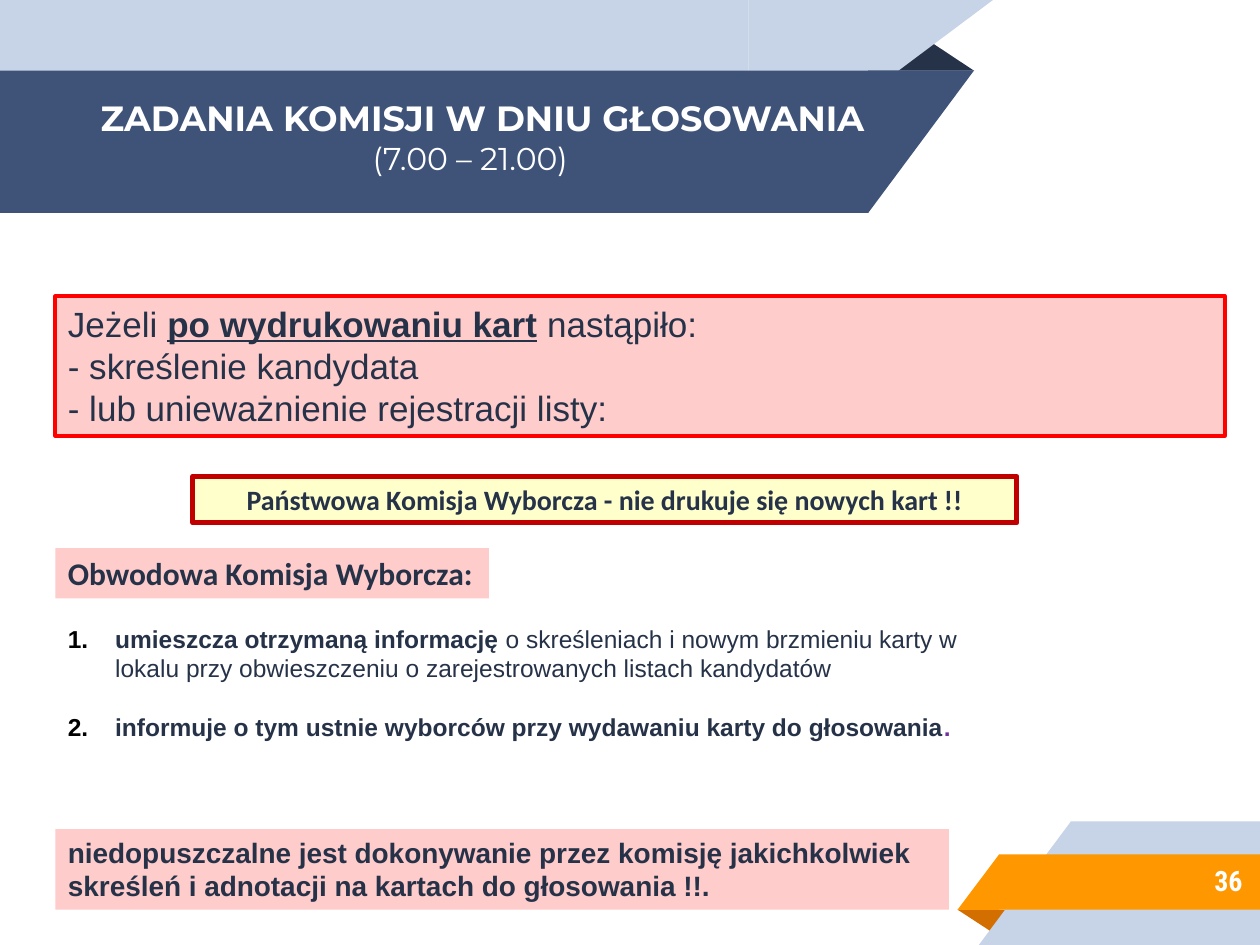
from pptx import Presentation
from pptx import util as u
from pptx.dml.color import RGBColor
from pptx.enum import shapes, text
from pptx.oxml.ns import qn
from lxml import etree

Pt = u.Pt
Kind = shapes.MSO_SHAPE
Side = text.PP_ALIGN


class Theme:
    navy, dark, pale = "3F5378", "263248", "C7D3E6"
    orange, rust, white = "FF9800", "D26F00", "FFFFFF"
    pink, cream, red, wine = "FFCCCC", "FFFFCC", "FF0000", "C00000"
    black, plum = "000000", "7030A0"
    big, mid, base, small = 20, 18, 16, 14
    head, body, label, digit = "Montserrat", "Arial", "Calibri", "Roboto Condensed"


T = Theme

FOLDS = [
    (Kind.ISOSCELES_TRIANGLE, (495.4, 13, 61.2, 27.4), T.dark, 0, False),
    (Kind.ISOSCELES_TRIANGLE, (547.2, 519.8, 31, 13.7), T.rust, 180, False),
]
TOP = [
    (0, 0, 427.7, 104.4, 139.7, T.pale),
    (0, 40.3, 496.1, 81.4, 60.5, T.navy),
]
FOOT = [
    (612, 469.4, 108, 70.6, 52.6, T.pale),
    (571, 488.2, 149, 31.7, 23.8, T.orange),
]

TITLE = [
    {"runs": [("ZADANIA KOMISJI W DNIU GŁOSOWANIA", {"bold": True})]},
    {"runs": [("(7.00 – 21.00)", {"size": T.mid})], "left": 155.5},
]
CASE = [
    {"runs": [("Jeżeli ", {}),
              ("po wydrukowaniu kart", {"bold": True, "line": True}),
              (" nastąpiło:", {}), ("\n", {}),
              ("- skreślenie kandydata", {})]},
    {"runs": [("- lub unieważnienie rejestracji listy:", {})]},
]
STATE = [{"runs": [("Państwowa Komisja Wyborcza - nie drukuje się nowych kart !!", {})],
          "align": Side.CENTER}]
LOCAL = [{"runs": [("Obwodowa Komisja Wyborcza:", {})]}]
TASKS = [
    {"runs": [("umieszcza otrzymaną informację ", {}),
              ("o skreśleniach i nowym brzmieniu karty w lokalu przy obwieszczeniu "
               "o zarejestrowanych listach kandydatów", {"bold": False})],
     "left": 27, "hang": True},
    {"runs": [("informuje o tym ustnie wyborców przy wydawaniu karty do głosowania", {}),
              (".", {"color": T.plum})],
     "left": 27, "hang": True, "gap": 16.8},
]
BAN = [{"runs": [("niedopuszczalne jest dokonywanie przez komisję jakichkolwiek "
                  "skreśleń i adnotacji na kartach do głosowania !!.", {})]}]
PAGE = [{"runs": [("36", {})], "align": Side.RIGHT}]

BOXES = [
    (TITLE, (50.4, 51.8, 663, 53.3),
     {"font": T.head, "size": T.big, "color": T.white}),
    (CASE, (31.7, 169.2, 668.2, 79.9),
     {"size": T.big, "fill": T.pink, "edge": (T.red, 2.25)}),
    (STATE, (110.2, 272.2, 470.9, 26.6),
     {"font": T.label, "size": T.base, "bold": True,
      "fill": T.cream, "edge": (T.wine, 3)}),
    (LOCAL, (31.7, 313.2, 247.7, 28.8),
     {"font": T.label, "size": T.mid, "bold": True, "fill": T.pink, "wrap": False}),
    (TASKS, (31.7, 352.8, 536.4, 74.9), {"size": T.small, "bold": True}),
    (BAN, (31.7, 473.8, 510.5, 46.1),
     {"size": T.base, "bold": True, "fill": T.pink}),
    (PAGE, (599.8, 486.7, 117.4, 33.1),
     {"font": T.digit, "size": T.base, "bold": True, "color": T.white,
      "grow": False, "inset": 7.2}),
]


def rgb(code):
    return RGBColor.from_string(code)


def draw(slide, kind, box, color, turn=0, flip=True):
    shape = slide.shapes.add_shape(kind, *map(Pt, box))
    shape.shadow.inherit = False
    shape.fill.solid()
    shape.fill.fore_color.rgb = rgb(color)
    shape.line.fill.background()
    shape.rotation = turn
    if flip:
        shape.element.spPr.find(qn("a:xfrm")).set("flipH", "1")
    if kind == Kind.ISOSCELES_TRIANGLE:
        shape.adjustments[0] = 0.324
    return shape


def band(slide, x, y, wide, high, slant, color, turn):
    edge = x + wide if turn else x - slant
    draw(slide, Kind.RECTANGLE, (x, y, wide, high), color, turn)
    draw(slide, Kind.RIGHT_TRIANGLE, (edge, y, slant, high), color, turn)


def number(para, left):
    props = para._p.get_or_add_pPr()
    props.set("indent", str(-Pt(left)))
    tint = etree.SubElement(props, qn("a:buClr"))
    etree.SubElement(tint, qn("a:srgbClr")).set("val", T.black)
    etree.SubElement(props, qn("a:buFont")).set("typeface", T.body)
    etree.SubElement(props, qn("a:buAutoNum")).set("type", "arabicPeriod")


def write(slide, paras, box, font=T.body, size=T.base, color=T.dark, bold=False,
          fill=None, edge=None, wrap=True, grow=True, inset=None):
    if fill:
        shape = draw(slide, Kind.RECTANGLE, box, fill, flip=False)
    else:
        shape = slide.shapes.add_textbox(*map(Pt, box))
    if edge:
        shape.line.color.rgb = rgb(edge[0])
        shape.line.width = Pt(edge[1])
    frame = shape.text_frame
    frame.word_wrap = wrap
    frame.auto_size = (text.MSO_AUTO_SIZE.SHAPE_TO_FIT_TEXT if grow
                       else text.MSO_AUTO_SIZE.NONE)
    frame.vertical_anchor = text.MSO_ANCHOR.TOP if grow else text.MSO_ANCHOR.MIDDLE
    if inset:
        frame.margin_left = frame.margin_right = Pt(inset)
        frame.margin_top = frame.margin_bottom = Pt(inset)
    for i, item in enumerate(paras):
        para = frame.add_paragraph() if i else frame.paragraphs[0]
        para.alignment = item.get("align", Side.LEFT)
        if "gap" in item:
            para.space_before = Pt(item["gap"])
        if "left" in item:
            para._p.get_or_add_pPr().set("marL", str(Pt(item["left"])))
        if item.get("hang"):
            number(para, item["left"])
        for words, look in item["runs"]:
            if words == "\n":
                para.add_line_break()
                continue
            run = para.add_run()
            run.text = words
            run.font.name = font
            run.font.size = Pt(look.get("size", size))
            run.font.bold = look.get("bold", bold)
            run.font.underline = look.get("line", False)
            run.font.color.rgb = rgb(look.get("color", color))


def main():
    deck = Presentation()
    deck.slide_width, deck.slide_height = Pt(720), Pt(540)
    slide = deck.slides.add_slide(deck.slide_layouts[6])
    for fold, bands, turn in zip(FOLDS, (TOP, FOOT), (180, 0)):
        draw(slide, *fold)
        for part in bands:
            band(slide, *part, turn)
    for paras, box, look in BOXES:
        write(slide, paras, box, **look)
    deck.save("out.pptx")


if __name__ == "__main__":
    main()
